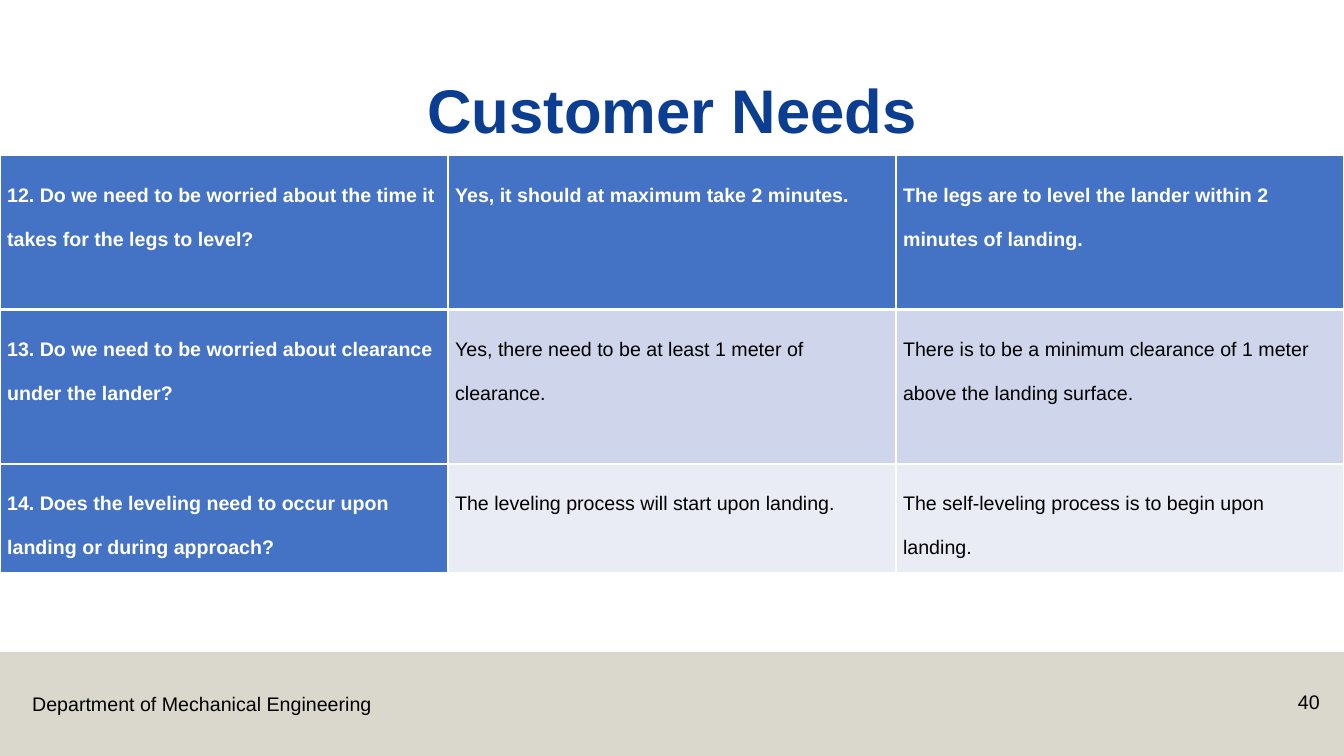
import pptx
import pptx.util
import pptx.dml.color
import pptx.enum.shapes
import pptx.enum.text
import pptx.oxml
import pptx.oxml.ns
from pptx.util import Cm

ALIGN = pptx.enum.text.PP_ALIGN
ANCHOR = pptx.enum.text.MSO_ANCHOR
WHITE, BLACK, NAVY, BLUE, STONE = "FFFFFF", "000000", "0B3D91", "4472C4", "B7B09C"
BODY_FILLS = ["CFD5EA", "E9EBF5"]
COLUMN_WIDTH = 11.29
ROW_HEIGHTS = [3.89, 3.89, 2.67]
NEEDS = [
    ["12. Do we need to be worried about the time it takes for the legs to level?",
     "Yes, it should at maximum take 2 minutes.",
     "The legs are to level the lander within 2 minutes of landing."],
    ["13. Do we need to be worried about clearance under the lander?",
     "Yes, there need to be at least 1 meter of clearance.",
     "There is to be a minimum clearance of 1 meter above the landing surface."],
    ["14. Does the leveling need to occur upon landing or during approach?",
     "The leveling process will start upon landing.",
     "The self-leveling process is to begin upon landing."],
]


def colour(hex_text):
    return pptx.dml.color.RGBColor.from_string(hex_text)


def set_all(target, values):
    for name, value in values.items():
        setattr(target, name, value)


def write(frame, text, size, hex_text, bold=False, **layout):
    para = frame.paragraphs[0]
    set_all(para, layout)
    span = para.add_run()
    span.text = text
    set_all(span.font, {"name": "Arial", "size": pptx.util.Pt(size), "bold": bold})
    span.font.color.rgb = colour(hex_text)


def add_text(page, place, text, size, hex_text, bold=False, wrap=True,
             anchor=ANCHOR.TOP, **layout):
    box = page.shapes.add_textbox(*map(Cm, place))
    set_all(box.text_frame, {"word_wrap": wrap, "vertical_anchor": anchor})
    write(box.text_frame, text, size, hex_text, bold, **layout)


def add_footer_band(page):
    band = page.shapes.add_shape(
        pptx.enum.shapes.MSO_SHAPE.RECTANGLE, Cm(0), Cm(16.43), Cm(33.87), Cm(2.62))
    band.shadow.inherit = False
    band.line.fill.background()
    band.fill.solid()
    band.fill.fore_color.rgb = colour(STONE)
    tint = band.fill._xPr.find(".//" + pptx.oxml.ns.qn("a:srgbClr"))
    pptx.oxml.ns.qn("a:alpha")
    tint.append(pptx.oxml.parse_xml(
        f'<a:alpha {pptx.oxml.ns.nsdecls("a")} val="50000"/>'))


def add_borders(cell, widths):
    properties = cell._tc.get_or_add_tcPr()
    for index, (side, points) in enumerate(widths.items()):
        properties.insert(index, pptx.oxml.parse_xml(
            f'<a:ln{side} {pptx.oxml.ns.nsdecls("a")} w="{pptx.util.Pt(points)}">'
            f'<a:solidFill><a:srgbClr val="{WHITE}"/></a:solidFill></a:ln{side}>'))


def add_needs_table(page):
    count = len(NEEDS[0])
    table = page.shapes.add_table(
        len(NEEDS), count, Cm(0), Cm(3.91),
        Cm(COLUMN_WIDTH * count), Cm(sum(ROW_HEIGHTS))).table
    for column in table.columns:
        column.width = Cm(COLUMN_WIDTH)
    margins = dict.fromkeys(
        ["margin_left", "margin_top", "margin_right", "margin_bottom"], Cm(0.18))
    for row, texts in enumerate(NEEDS):
        table.rows[row].height = Cm(ROW_HEIGHTS[row])
        for column, text in enumerate(texts):
            cell = table.cell(row, column)
            heading = row == 0 or column == 0
            set_all(cell, margins)
            cell.fill.solid()
            cell.fill.fore_color.rgb = colour(BLUE if heading else BODY_FILLS[row - 1])
            add_borders(cell, {"L": 1, "R": 1, "T": 3 if row == 1 else 1,
                               "B": 3 if row == 0 else 1})
            write(cell.text_frame, text, 14, WHITE if heading else BLACK,
                  heading, line_spacing=2.0)


def main():
    deck = pptx.Presentation()
    set_all(deck, {"slide_width": Cm(33.87), "slide_height": Cm(19.05)})
    page = deck.slides.add_slide(deck.slide_layouts[6])
    add_footer_band(page)
    add_text(page, (0.56, 17.32, 9.12, 0.86), "Department of Mechanical Engineering",
             14, BLACK, wrap=False)
    add_text(page, (2.34, 1.02, 29.21, 3.68), "Customer Needs", 44, NAVY, bold=True,
             anchor=ANCHOR.MIDDLE, alignment=ALIGN.CENTER, line_spacing=0.9)
    add_text(page, (31.55, 17.25, 1.96, 1.02), "40", 14, BLACK, alignment=ALIGN.RIGHT)
    add_needs_table(page)
    deck.save("out.pptx")


if __name__ == "__main__":
    main()
